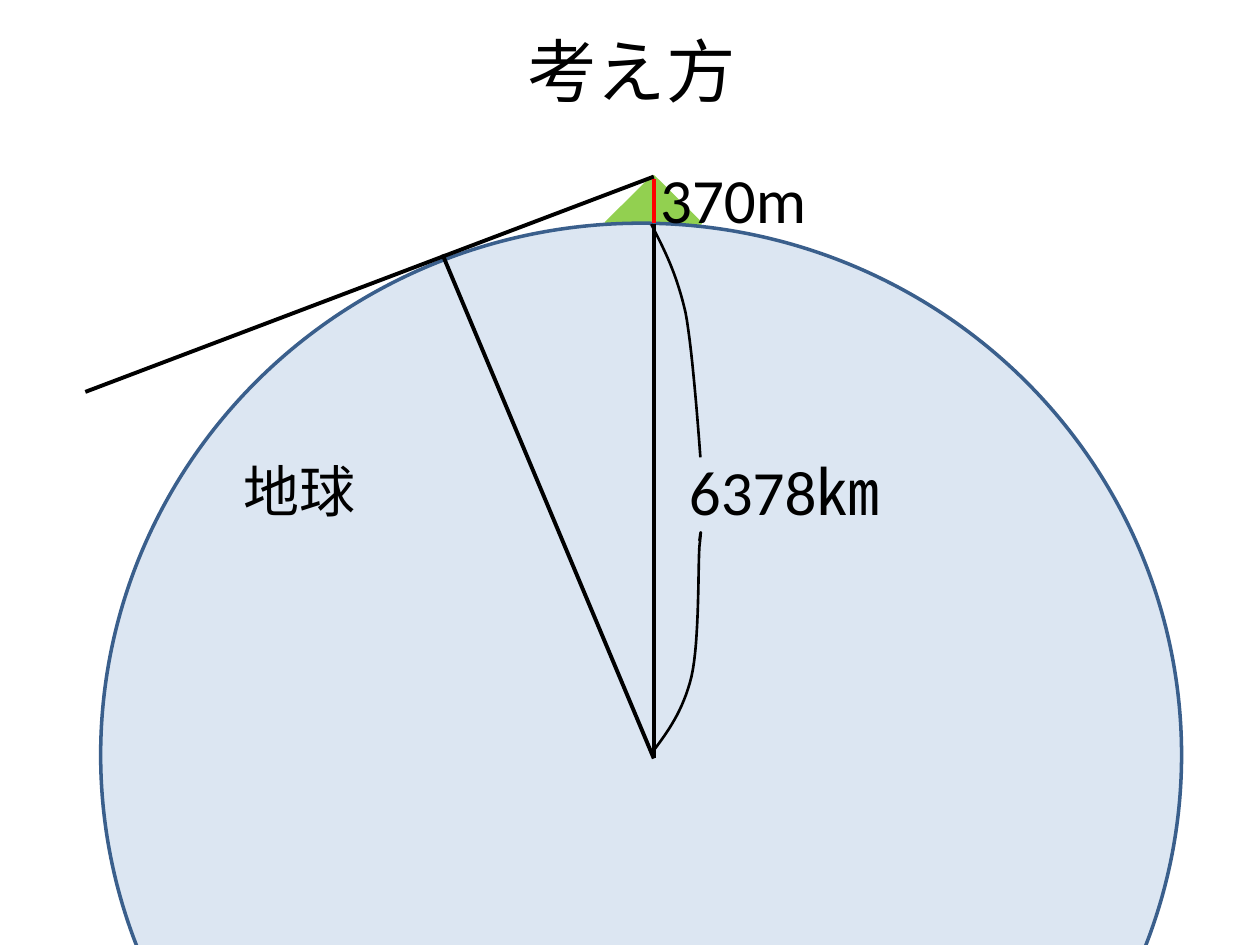
"""Build a slide explaining how far the horizon is from a hilltop."""
from typing import NamedTuple

from lxml import etree
from pptx import Presentation
from pptx.dml.color import RGBColor
from pptx.enum.shapes import MSO_CONNECTOR, MSO_SHAPE
from pptx.enum.text import MSO_ANCHOR, MSO_AUTO_SIZE, PP_ALIGN
from pptx.oxml.ns import qn
from pptx.util import Cm, Pt

STRAIGHT = MSO_CONNECTOR.STRAIGHT
TRIANGLE, OVAL = MSO_SHAPE.ISOSCELES_TRIANGLE, MSO_SHAPE.OVAL
MIDDLE, CENTER = MSO_ANCHOR.MIDDLE, PP_ALIGN.CENTER
FIT_SHAPE, NO_FIT = MSO_AUTO_SIZE.SHAPE_TO_FIT_TEXT, MSO_AUTO_SIZE.NONE

BLACK = RGBColor(0x00, 0x00, 0x00)
RED = RGBColor(0xFF, 0x00, 0x00)
GREEN = RGBColor(0x92, 0xD0, 0x50)
PALE_BLUE = RGBColor(0xDC, 0xE6, 0xF2)
EDGE_BLUE = RGBColor(0x3A, 0x5F, 0x8C)
FONT = "Calibri"
STEPS = 16

Point = tuple[float, float]
Box = tuple[float, float, float, float]


class Body(NamedTuple):
    preset: MSO_SHAPE
    box: Box
    fill: RGBColor
    edge: RGBColor


class Segment(NamedTuple):
    start: Point
    end: Point
    color: RGBColor = BLACK


class Label(NamedTuple):
    text: str
    box: Box
    size: float


HILLTOP = (13.18, 3.56)
EARTH_CENTER = (13.18, 15.29)

BODIES = [
    Body(TRIANGLE, (12.22, 3.56, 1.9, 0.94), GREEN, GREEN),
    Body(OVAL, (2.03, 4.5, 21.79, 21.44), PALE_BLUE, EDGE_BLUE),
]
SIGHT_LINES = [
    Segment((13.18, 4.52), EARTH_CENTER),
    Segment(HILLTOP, (1.72, 7.9)),
    Segment((8.92, 5.13), EARTH_CENTER),
]
HILL_HEIGHT = Segment((13.18, 3.61), (13.18, 4.5), RED)
RADIUS_ARCS = [
    [(13.13, 4.52), (13.39, 5.03), (13.64, 5.51), (13.82, 6.3),
     (13.97, 7.06), (14.12, 9.22), (14.12, 9.22)],
    [(13.13, 15.19), (13.46, 14.76), (13.77, 14.33), (13.94, 13.64),
     (14.1, 12.93), (14.07, 11.48), (14.1, 11.02),
     (14.15, 10.57), (14.12, 10.74), (14.1, 10.9)],
]
LABELS = [
    Label("6378㎞", (13.64, 8.99, 4.39, 1.8), 36),
    Label("370m", (13.06, 3.12, 3.48, 1.8), 36),
    Label("地球", (4.65, 9.07, 2.79, 1.63), 32),
]


def to_cm(values: tuple[float, ...]) -> list[Cm]:
    return [Cm(value) for value in values]


def write(frame, text: str, size: float) -> None:
    frame.text = text
    font = frame.paragraphs[0].runs[0].font
    font.name, font.size = FONT, Pt(size)
    font.color.rgb = BLACK


def set_line(line, color: RGBColor, width: float) -> None:
    line.color.rgb = color
    line.width = Pt(width)


def draw_title(slide, label: Label) -> None:
    title = slide.shapes.title
    title.left, title.top, title.width, title.height = to_cm(label.box)
    frame = title.text_frame
    write(frame, label.text, label.size)
    frame.auto_size = NO_FIT
    frame.vertical_anchor = MIDDLE
    frame.paragraphs[0].alignment = CENTER


def draw_body(slide, body: Body) -> None:
    shape = slide.shapes.add_shape(body.preset, *to_cm(body.box))
    shape.shadow.inherit = False
    shape.fill.solid()
    shape.fill.fore_color.rgb = body.fill
    set_line(shape.line, body.edge, 2)


def draw_segment(slide, segment: Segment) -> None:
    connector = slide.shapes.add_connector(
        STRAIGHT, *to_cm(segment.start + segment.end))
    set_line(connector.line, segment.color, 2.25)
    etree.SubElement(connector._element.spPr, qn("a:effectLst"))


def bezier(controls: list[Point], t: float) -> Point:
    weights = ((1 - t) ** 3, 3 * t * (1 - t) ** 2, 3 * t * t * (1 - t), t ** 3)
    return tuple(sum(w * point[axis] for w, point in zip(weights, controls))
                 for axis in (0, 1))


def draw_arc(slide, controls: list[Point]) -> None:
    points = [to_cm(bezier(controls[first:first + 4], step / STEPS))
              for first in range(0, len(controls) - 1, 3)
              for step in range(1, STEPS + 1)]
    builder = slide.shapes.build_freeform(*to_cm(controls[0]))
    builder.add_line_segments(points, close=False)
    arc = builder.convert_to_shape()
    arc.shadow.inherit = False
    arc.fill.background()
    set_line(arc.line, BLACK, 1.5)


def draw_label(slide, label: Label) -> None:
    frame = slide.shapes.add_textbox(*to_cm(label.box)).text_frame
    frame.word_wrap = False
    frame.auto_size = FIT_SHAPE
    write(frame, label.text, label.size)


def main() -> None:
    deck = Presentation()
    deck.slide_width, deck.slide_height = Cm(25.4), Cm(19.05)
    slide = deck.slides.add_slide(deck.slide_layouts[5])
    draw_title(slide, Label("考え方", (1.3, 0.53, 22.86, 1.75), 39.6))
    for body in BODIES:
        draw_body(slide, body)
    for segment in SIGHT_LINES:
        draw_segment(slide, segment)
    for controls in RADIUS_ARCS:
        draw_arc(slide, controls)
    for label in LABELS:
        draw_label(slide, label)
    draw_segment(slide, HILL_HEIGHT)
    deck.save("out.pptx")


if __name__ == "__main__":
    main()
